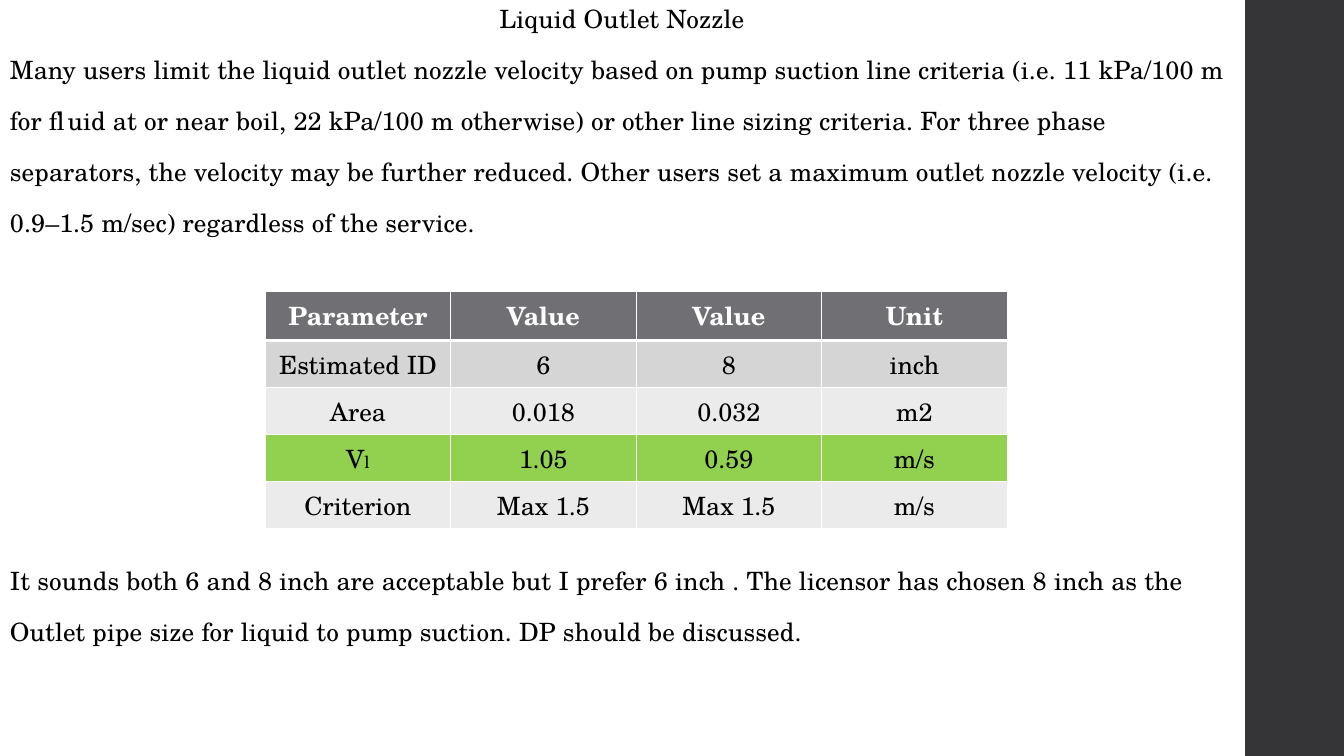
import pptx
import pptx.util
import pptx.dml.color
import pptx.enum.shapes
import pptx.enum.text
import pptx.oxml
import pptx.oxml.ns

Inches = pptx.util.Inches
Pt = pptx.util.Pt
ALIGN = pptx.enum.text.PP_ALIGN

COLORS = {
    "ink": "000000",
    "white": "FFFFFF",
    "side": "353537",
    "head": "6F6F74",
    "dark": "D5D5D6",
    "light": "EBEBEB",
    "green": "92D050",
}

INTRO = [
    "Many users limit the liquid outlet nozzle velocity based on pump suction line criteria (i.e. 11 kPa/100 m",
    "for fluid at or near boil, 22 kPa/100 m otherwise) or other line sizing criteria. For three phase",
    "separators, the velocity may be further reduced. Other users set a maximum outlet nozzle velocity (i.e.",
    "0.9–1.5 m/sec) regardless of the service.",
]
CLOSING = [
    "It sounds both 6 and 8 inch are acceptable but I prefer 6 inch . The licensor has chosen 8 inch as the",
    "Outlet pipe size for liquid to pump suction. DP should be discussed.",
]
ROWS = [
    ("head", ["Parameter", "Value", "Value", "Unit"]),
    ("dark", ["Estimated ID", "6", "8", "inch"]),
    ("light", ["Area", "0.018", "0.032", "m2"]),
    ("green", [[("V", 18), ("l", 12)], "1.05", "0.59", "m/s"]),
    ("light", ["Criterion", "Max 1.5", "Max 1.5", "m/s"]),
]


class Page:
    """Holds the text style and the current slide, and adds elements to it."""

    font = "TeX Gyre Schola"
    size = 18

    def __init__(self, slide):
        self.slide = slide

    def color(self, name):
        return pptx.dml.color.RGBColor.from_string(COLORS[name])

    def run(self, para, text, size=size, color="ink", bold=False, track=None):
        run = para.add_run()
        run.text = text
        run.font.name = self.font
        run.font.size = Pt(size)
        run.font.bold = bold
        run.font.color.rgb = self.color(color)
        if track:
            run.font._element.set("spc", str(track))

    def lines(self, frame, lines, align):
        frame.word_wrap = True
        frame.auto_size = pptx.enum.text.MSO_AUTO_SIZE.NONE
        frame.vertical_anchor = pptx.enum.text.MSO_ANCHOR.TOP
        frame.margin_left = frame.margin_right = Inches(0.1)
        frame.margin_top = frame.margin_bottom = Inches(0.05)
        for i, line in enumerate(lines):
            para = frame.add_paragraph() if i else frame.paragraphs[0]
            para.alignment = align
            para.line_spacing = 0.95
            para.space_before = Pt(14 if i else 0)
            para.space_after = Pt(2)
            self.run(para, line, track=10)

    def title(self, text, left, top, width, height):
        title = self.slide.shapes.title
        title.left, title.top = Inches(left), Inches(top)
        title.width, title.height = Inches(width), Inches(height)
        self.lines(title.text_frame, [text], ALIGN.CENTER)

    def text(self, lines, left, top, width, height):
        box = self.slide.shapes.add_textbox(
            Inches(left), Inches(top), Inches(width), Inches(height))
        self.lines(box.text_frame, lines, ALIGN.LEFT)

    def bar(self, color, left, top, width, height):
        bar = self.slide.shapes.add_shape(
            pptx.enum.shapes.MSO_SHAPE.RECTANGLE,
            Inches(left), Inches(top), Inches(width), Inches(height))
        bar.shadow.inherit = False
        bar.fill.solid()
        bar.fill.fore_color.rgb = self.color(color)
        bar.line.fill.background()

    def border(self, cell, side, width):
        props = cell._tc.get_or_add_tcPr()
        props.append(pptx.oxml.parse_xml(
            f'<a:ln{side} {pptx.oxml.ns.nsdecls("a")} w="{Pt(width)}"><a:solidFill>'
            f'<a:srgbClr val="{COLORS["white"]}"/></a:solidFill></a:ln{side}>'))

    def table(self, rows, left, top, wide, high):
        count = len(rows[0][1])
        table = self.slide.shapes.add_table(
            len(rows), count, Inches(left), Inches(top),
            Inches(wide * count), Inches(high * len(rows))).table
        for r, (fill, items) in enumerate(rows):
            table.rows[r].height = Inches(high)
            for c, item in enumerate(items):
                table.columns[c].width = Inches(wide)
                cell = table.cell(r, c)
                for side in "LRTB":
                    thick = (r, side) in ((0, "B"), (1, "T"))
                    self.border(cell, side, 3 if thick else 1)
                cell.fill.solid()
                cell.fill.fore_color.rgb = self.color(fill)
                para = cell.text_frame.paragraphs[0]
                para.alignment = ALIGN.CENTER
                parts = [(item, self.size)] if isinstance(item, str) else item
                for text, size in parts:
                    self.run(para, text, size, "ink" if r else "white", r == 0)


def main():
    deck = pptx.Presentation()
    deck.slide_width, deck.slide_height = Inches(13.33), Inches(7.5)
    page = Page(deck.slides.add_slide(deck.slide_layouts[5]))
    page.bar("side", 12.35, 0, 0.98, 7.5)
    page.title("Liquid Outlet Nozzle", 0, 0, 12.34, 0.45)
    page.text(INTRO, 0, 0.51, 12.34, 2.1)
    page.table(ROWS, 2.63, 2.89, 1.84, 0.41)
    page.text(CLOSING, 0, 5.58, 12.34, 1.1)
    deck.save("out.pptx")


if __name__ == "__main__":
    main()
